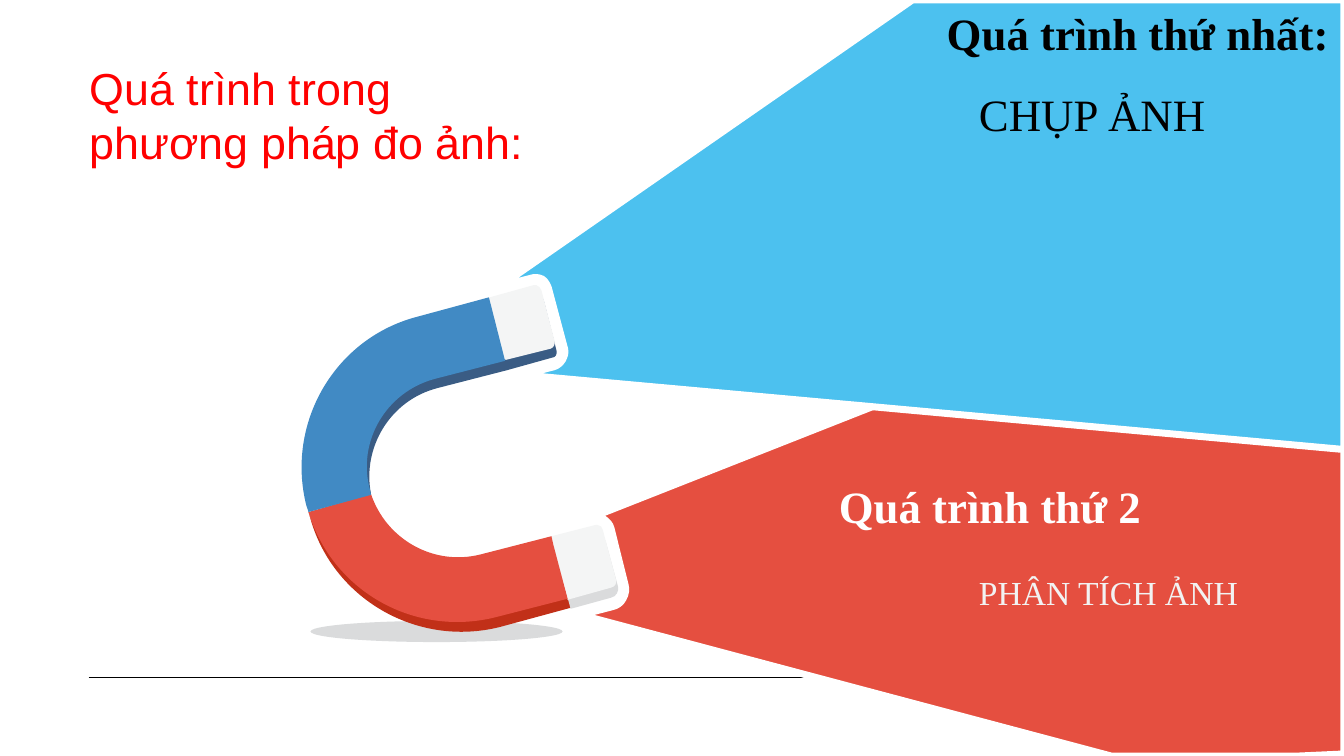
from dataclasses import dataclass

from lxml import etree
from pptx import Presentation
from pptx.dml.color import RGBColor
from pptx.enum import shapes, text
from pptx.oxml import ns
from pptx.util import Inches, Pt


@dataclass(frozen=True)
class Theme:
    title: str = "FF0000"
    black: str = "000000"
    white: str = "FFFFFF"
    pale: str = "F2F2F2"
    sky: str = "4CC1EF"
    blue: str = "418AC4"
    navy: str = "3A5C84"
    red: str = "E54F40"
    brick: str = "C13018"
    tip: str = "F4F5F5"
    shade: str = "DADBDC"
    sans: str = "Arial"
    serif: str = "Times New Roman"
    large: int = 32
    medium: int = 24


@dataclass(frozen=True)
class Box:
    left: float
    top: float
    width: float
    height: float

    def inner(self, left, top, width, height):
        """Box whose offset is measured from this one's corner."""
        return Box(self.left + left, self.top + top, width, height)

    def lengths(self):
        return [Inches(v) for v in (self.left, self.top, self.width, self.height)]


THEME = Theme()
CURVE_STEPS = 16


def color(value):
    return RGBColor.from_string(value)


def paint(shape, fill, outline=None):
    shape.shadow.inherit = False
    shape.fill.solid()
    shape.fill.fore_color.rgb = color(fill)
    if outline:
        shape.line.color.rgb = color(outline)
        shape.line.width = Pt(5)
    else:
        shape.line.fill.background()


def trace(outline):
    """Sample the outline, so that the shape's frame encloses its curves."""
    points = []
    for step in outline:
        if len(step) == 2:
            points.append(step)
            continue
        knots = [points[-1], step[:2], step[2:4], step[4:]]
        for i in range(1, CURVE_STEPS + 1):
            t = i / CURVE_STEPS
            weights = ((1 - t) ** 3, 3 * t * (1 - t) ** 2, 3 * t * t * (1 - t), t ** 3)
            points.append(tuple(sum(w * k[axis] for w, k in zip(weights, knots))
                                for axis in (0, 1)))
    return points


def draw_curves(shape, box, outline):
    """Replace the sampled path by its true corners and Bézier curves."""
    path = shape._element.find(".//" + ns.qn("a:path"))
    for command in list(path):
        path.remove(command)
    for index, step in enumerate(outline):
        tag = "a:moveTo" if index == 0 else "a:lnTo" if len(step) == 2 else "a:cubicBezTo"
        command = etree.SubElement(path, ns.qn(tag))
        for x, y in zip(step[::2], step[1::2]):
            etree.SubElement(command, ns.qn("a:pt"),
                             x=str(Inches(box.left + x) - shape.left),
                             y=str(Inches(box.top + y) - shape.top))
    etree.SubElement(path, ns.qn("a:close"))


def add_outline(page, box, outline, fill, line=None):
    """Draw (x, y) corners and (x1, y1, x2, y2, x, y) curves, offset by the box."""
    points = [(Inches(box.left + x), Inches(box.top + y)) for x, y in trace(outline)]
    builder = page.shapes.build_freeform(*points[0], scale=1.0)
    builder.add_line_segments(points[1:], close=True)
    shape = builder.convert_to_shape()
    draw_curves(shape, box, outline)
    paint(shape, fill, line)


def write(shape, words, *, font, size, ink, bold=False, inset=0.0,
          align=text.PP_ALIGN.LEFT, anchor=text.MSO_ANCHOR.TOP):
    frame = shape.text_frame
    frame.word_wrap = True
    frame.auto_size = text.MSO_AUTO_SIZE.SHAPE_TO_FIT_TEXT
    frame.vertical_anchor = anchor
    frame.margin_left = frame.margin_right = Inches(inset)
    frame.margin_top = frame.margin_bottom = Inches(0.05)
    para = frame.paragraphs[0]
    para.alignment = align
    span = para.add_run()
    span.text = words
    span.font.name = font
    span.font.size = Pt(size)
    span.font.bold = bold
    span.font.color.rgb = color(ink)


def add_title(page, box):
    title = page.shapes.title
    title.left, title.top, title.width, title.height = box.lengths()
    write(title, "Quá trình trong phương pháp đo ảnh:", font=THEME.sans,
          size=THEME.large, ink=THEME.title, inset=0.1)


def add_ground_line(page, box):
    left, top, width, _ = box.lengths()
    line = page.shapes.add_connector(shapes.MSO_CONNECTOR.STRAIGHT,
                                     left, top, left + width, top)
    line.line.color.rgb = color(THEME.black)
    line.line.width = Pt(1)
    etree.SubElement(line._element.spPr, ns.qn("a:effectLst"))


def add_caption(page, heading_box, heading, detail_box, detail, *,
                ink, detail_ink, detail_size):
    write(page.shapes.add_textbox(*heading_box.lengths()), heading, font=THEME.serif,
          size=THEME.large, ink=ink, bold=True, anchor=text.MSO_ANCHOR.BOTTOM)
    write(page.shapes.add_textbox(*detail_box.lengths()), detail, font=THEME.serif,
          size=detail_size, ink=detail_ink, align=text.PP_ALIGN.JUSTIFY)


def add_red_beam(page, box):
    right, bottom = box.width, box.height
    add_outline(page, box, [
        (right, 0.19), (right, bottom - 0.02), (7.89, bottom), (6.02, bottom),
        (0.76, 4.1), (1.07, 4.02), (1.12, 4.01, 1.16, 3.98, 1.18, 3.94),
        (1.21, 3.89, 1.21, 3.84, 1.2, 3.8), (1.06, 3.24),
        (1.05, 3.2, 1.02, 3.17, 0.99, 3.15), (0.95, 3.13, 0.91, 3.13, 0.87, 3.14),
        (0.8, 3.16)], THEME.red, THEME.white)


def add_blue_beam(page, box):
    right, bottom = box.width, box.height
    add_outline(page, box, [
        (right, 0), (right, bottom), (0.18, 3.72), (0.49, 3.64),
        (0.53, 3.63, 0.56, 3.6, 0.58, 3.57), (0.6, 3.53, 0.61, 3.5, 0.6, 3.46),
        (0.44, 2.86), (0.43, 2.83, 0.41, 2.79, 0.38, 2.77),
        (0.34, 2.75, 0.3, 2.75, 0.27, 2.76), (-0.04, 2.84), (4.05, 0)],
        THEME.sky, THEME.white)


def add_magnet(page, box):
    add_outline(page, box, [  # shade inside the blue arm
        (3.02, 1.58), (3.04, 1.67), (2.34, 1.85), (1.87, 1.97, 1.59, 2.44, 1.68, 2.9),
        (1.68, 2.89, 1.41, 2.98, 1.41, 2.96), (1.28, 2.48, 1.69, 1.67, 2.17, 1.54)],
        THEME.navy)
    shadow = page.shapes.add_shape(shapes.MSO_SHAPE.OVAL,
                                   *box.inner(1.08, 4.16, 2.5, 0.21).lengths())
    paint(shadow, THEME.shade)
    add_outline(page, box, [  # shade under the red arm
        (1.06, 3.08), (1.3, 3.87, 2.6, 3.61, 3.54, 3.68), (3.64, 3.94), (3.66, 4.03),
        (2.96, 4.22), (2.13, 4.43, 1.28, 3.93, 1.07, 3.11),
        (1.07, 3.1, 1.06, 3.09, 1.06, 3.08)], THEME.brick)
    add_outline(page, box, [  # red arm: tip shade, then tip
        (3.93, 3.31), (3.97, 3.31, 4, 3.34, 4.01, 3.38), (4.13, 3.82),
        (4.14, 3.87, 4.11, 3.92, 4.06, 3.93), (3.66, 4.04), (3.49, 3.41),
        (3.89, 3.31), (3.91, 3.31, 3.92, 3.3, 3.93, 3.31)], THEME.shade)
    add_outline(page, box, [
        (3.93, 3.21), (3.95, 3.21, 3.98, 3.23, 3.98, 3.26), (4.11, 3.75),
        (4.12, 3.79, 4.1, 3.82, 4.06, 3.83), (3.63, 3.95), (3.47, 3.32),
        (3.9, 3.21), (3.91, 3.21, 3.92, 3.2, 3.93, 3.21)], THEME.tip)
    add_outline(page, box, [  # blue arm: tip shade, then tip
        (3.33, 0.93), (3.36, 0.93, 3.38, 0.95, 3.39, 0.97), (3.52, 1.48),
        (3.53, 1.51, 3.51, 1.55, 3.47, 1.55), (3.04, 1.67), (2.57, 1.2),
        (2.72, 1.17, 3.16, 0.97, 3.31, 0.93)], THEME.navy)
    add_outline(page, box, [
        (3.32, 0.83), (3.34, 0.84, 3.36, 0.85, 3.37, 0.88), (3.5, 1.38),
        (3.51, 1.42, 3.49, 1.45, 3.46, 1.46), (3.02, 1.57), (2.38, 1.4),
        (2.86, 0.95), (3.29, 0.83), (3.3, 0.83, 3.31, 0.83, 3.32, 0.83)], THEME.tip)
    add_outline(page, box, [  # red half
        (1.68, 2.9), (1.83, 3.35, 2.3, 3.62, 2.77, 3.5), (3.47, 3.32), (3.49, 3.41),
        (3.63, 3.94), (2.93, 4.12), (2.12, 4.33, 1.3, 3.87, 1.06, 3.08)], THEME.red)
    add_outline(page, box, [  # blue half
        (2.85, 0.95), (3.01, 1.58), (2.31, 1.76), (1.83, 1.89, 1.54, 2.38, 1.67, 2.86),
        (1.67, 2.88, 1.68, 2.89, 1.68, 2.91), (1.06, 3.08),
        (1.05, 3.05, 1.05, 3.04, 1.04, 3.02), (0.83, 2.2, 1.32, 1.35, 2.15, 1.14)],
        THEME.blue)


def main():
    deck = Presentation()
    deck.slide_width, deck.slide_height = Inches(13.33), Inches(7.5)
    page = deck.slides.add_slide(deck.slide_layouts[5])
    red_box = Box(5, 2, 8.33, 5.5)
    blue_box = Box(5, 0, 8.33, 4.46)

    add_title(page, Box(0.79, 0.55, 4.73, 1.18))
    add_ground_line(page, Box(0.88, 6.72, 11.58, 0))
    add_red_beam(page, red_box)
    add_blue_beam(page, blue_box)
    add_magnet(page, Box(2, 2, 4.2, 4.4))
    add_caption(page, red_box.inner(3.32, 2.69, 4.46, 0.64), "Quá trình thứ 2",
                red_box.inner(4.71, 3.62, 3.6, 0.5), "PHÂN TÍCH ẢNH",
                ink=THEME.white, detail_ink=THEME.pale, detail_size=THEME.medium)
    add_caption(page, blue_box.inner(4.39, 0, 3.94, 0.64), "Quá trình thứ nhất:",
                blue_box.inner(4.71, 0.81, 3.6, 0.64), "CHỤP ẢNH",
                ink=THEME.black, detail_ink=THEME.black, detail_size=THEME.large)
    deck.save("out.pptx")


if __name__ == "__main__":
    main()
